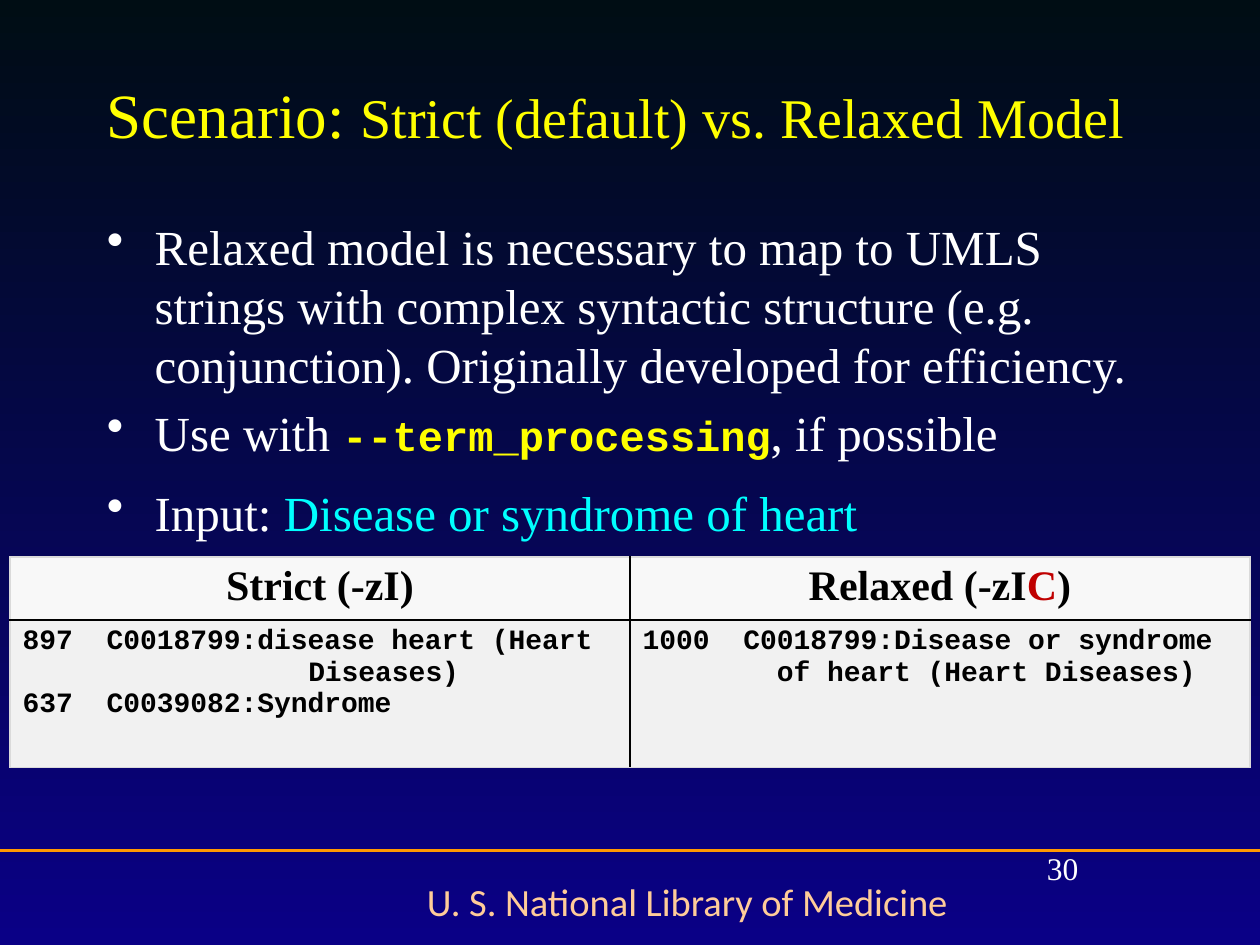
from lxml import etree
from pptx import Presentation
from pptx.dml.color import RGBColor
from pptx.enum.shapes import MSO_CONNECTOR
from pptx.enum.text import MSO_ANCHOR, PP_ALIGN
from pptx.oxml.ns import qn
from pptx.util import Inches, Pt

STRAIGHT = MSO_CONNECTOR.STRAIGHT
TOP, BOTTOM = MSO_ANCHOR.TOP, MSO_ANCHOR.BOTTOM
LEFT, CENTER = PP_ALIGN.LEFT, PP_ALIGN.CENTER

# The slide is a grid of square cells
COLUMNS, ROWS, CELL = 100, 75, Inches(0.1)

WHITE, BLACK, YELLOW, CYAN = "FFFFFF", "000000", "FFFF00", "00FFFF"
RED, ORANGE, PEACH, FRAME = "C00000", "FF9900", "FFCC99", "DADADA"
HEADER_FILL, RESULT_FILL = "F8F8F8", "F1F1F1"
SERIF, MONO, SANS = "Times New Roman", "Courier New", "Calibri"

TITLE = {"name": SERIF, "size": Pt(36), "color": YELLOW}
BODY = {"name": SERIF, "size": Pt(28), "color": WHITE}
OPTION = {"name": MONO, "size": Pt(24), "color": YELLOW, "bold": True}
HEADER = {"name": SERIF, "size": Pt(24), "color": BLACK, "bold": True}
RESULT = {"name": MONO, "size": Pt(16), "color": BLACK, "bold": True}
FOOTER = {"name": SANS, "size": Pt(22), "color": PEACH}
NUMBER = {"name": SERIF, "size": Pt(18), "color": WHITE}

CHARACTER = Pt(9.6)  # width of one character of RESULT


def rgb(color):
    return RGBColor.from_string(color)


def grid(*lengths):
    return [round(length * CELL) for length in lengths]


class SlideBuilder:
    """Holds the slide and draws each kind of element on it."""

    def __init__(self, presentation):
        self.slide = presentation.slides.add_slide(presentation.slide_layouts[6])

    def background(self, *colors):
        fill = self.slide.background.fill
        fill.gradient()
        fill.gradient_angle = 270
        for stop, color in zip(fill.gradient_stops, colors):
            stop.color.rgb = rgb(color)

    def line(self, start, end, color, width):
        connector = self.slide.shapes.add_connector(STRAIGHT, *grid(*start, *end))
        connector.line.color.rgb = rgb(color)
        connector.line.width = Pt(width)
        etree.SubElement(connector._element.spPr, qn("a:effectLst"))

    def runs(self, paragraph, runs):
        for text, style in runs:
            run = paragraph.add_run()
            run.text = text
            for key, value in style.items():
                if key == "color":
                    run.font.color.rgb = rgb(value)
                else:
                    setattr(run.font, key, value)

    def indent(self, paragraph, margin, hanging):
        properties = paragraph._p.get_or_add_pPr()
        properties.set("marL", str(int(margin)))
        properties.set("indent", str(-int(hanging)))
        return properties

    def text(self, area, paragraphs, align=LEFT, anchor=TOP):
        frame = self.slide.shapes.add_textbox(*grid(*area)).text_frame
        frame.word_wrap = True
        frame.vertical_anchor = anchor
        for index, runs in enumerate(paragraphs):
            paragraph = frame.add_paragraph() if index else frame.paragraphs[0]
            paragraph.alignment = align
            self.runs(paragraph, runs)
        return frame.paragraphs

    def bullets(self, area, items):
        paragraphs = self.text(area, [runs for _, runs in items])
        for paragraph, (space, _) in zip(paragraphs, items):
            properties = self.indent(paragraph, Inches(0.38), Inches(0.38))
            color = etree.SubElement(properties, qn("a:buClr"))
            etree.SubElement(color, qn("a:srgbClr"), val=WHITE)
            etree.SubElement(properties, qn("a:buChar"), char="•")
            paragraph.space_before = Pt(space)

    def borders(self, cell, colors):
        for index, (side, color) in enumerate(colors.items()):
            line = etree.Element(qn("a:ln" + side), w=str(Pt(1)))
            fill = etree.SubElement(line, qn("a:solidFill"))
            etree.SubElement(fill, qn("a:srgbClr"), val=color)
            cell._tc.get_or_add_tcPr().insert(index, line)

    def table(self, area, row_heights, fills, headers, results):
        columns = len(headers)
        frame = self.slide.shapes.add_table(2, columns, *grid(*area))
        table = frame.table
        table.first_row = table.horz_banding = False
        for row, height in zip(table.rows, grid(*row_heights)):
            row.height = height
        for row, fill in enumerate(fills):
            for column in range(columns):
                cell = table.cell(row, column)
                cell.fill.solid()
                cell.fill.fore_color.rgb = rgb(fill)
                # Light frame outside, black lines between cells
                self.borders(cell, {
                    "L": BLACK if column else FRAME,
                    "R": BLACK if column < columns - 1 else FRAME,
                    "T": BLACK if row else FRAME,
                    "B": FRAME if row else BLACK,
                })
        for column, runs in enumerate(headers):
            paragraph = table.cell(0, column).text_frame.paragraphs[0]
            paragraph.alignment = CENTER
            self.runs(paragraph, runs)
        for column, lines in enumerate(results):
            self.results(table.cell(1, column).text_frame, lines)

    def results(self, frame, lines):
        """Each line is (score, characters before the text, text)."""
        for index, (score, offset, text) in enumerate(lines):
            paragraph = frame.add_paragraph() if index else frame.paragraphs[0]
            margin = offset * CHARACTER
            properties = self.indent(paragraph, margin, margin if score else 0)
            if score:
                tabs = etree.SubElement(properties, qn("a:tabLst"))
                etree.SubElement(tabs, qn("a:tab"), pos=str(margin), algn="l")
                text = f"{score}\t{text}"
            self.runs(paragraph, [(text, RESULT)])


def main():
    presentation = Presentation()
    presentation.slide_width = COLUMNS * CELL
    presentation.slide_height = ROWS * CELL
    builder = SlideBuilder(presentation)

    # Background and footer
    builder.background("000D14", "0A0086")
    builder.line((0, 67.5), (COLUMNS, 67.5), ORANGE, 1.5)
    builder.text((23.2, 69.2, 62.7, 4.7),
                 [[("U. S. National Library of Medicine", FOOTER)]], CENTER)

    # Title
    builder.text((7.5, 5, 85, 7.5), [[
        ("Scenario: ", TITLE),
        ("Strict (default) vs. Relaxed Model", {**TITLE, "size": Pt(32)}),
    ]], anchor=BOTTOM)

    # Bullets: space before, runs
    builder.bullets((7.5, 16.7, 85, 50), [
        (0, [("Relaxed model is necessary to map to UMLS strings with complex "
              "syntactic structure (e.g. conjunction). Originally developed "
              "for efficiency.", BODY)]),
        (5.6, [("Use with ", BODY), ("--term_processing", OPTION),
               (", if possible", BODY)]),
        (12, [("Input: ", BODY),
              ("Disease or syndrome of heart", {**BODY, "color": CYAN})]),
    ])

    # Comparison of the two models
    builder.table(
        (0.8, 44.2, 98.4, 16.4), (4.7, 11.7), (HEADER_FILL, RESULT_FILL),
        [[("Strict (-zI)", HEADER)],
         [("Relaxed (-zI", HEADER), ("C", {**HEADER, "color": RED}),
          (")", HEADER)]],
        [[("897", 5, "C0018799:disease heart (Heart"),
          (None, 17, "Diseases)"),
          ("637", 5, "C0039082:Syndrome")],
         [("1000", 6, "C0018799:Disease or syndrome"),
          (None, 8, "of heart (Heart Diseases)")]])

    # Slide number
    builder.text((82.1, 66.9, 7.2, 5.2), [[("30", NUMBER)]])

    presentation.save("out.pptx")


if __name__ == "__main__":
    main()
